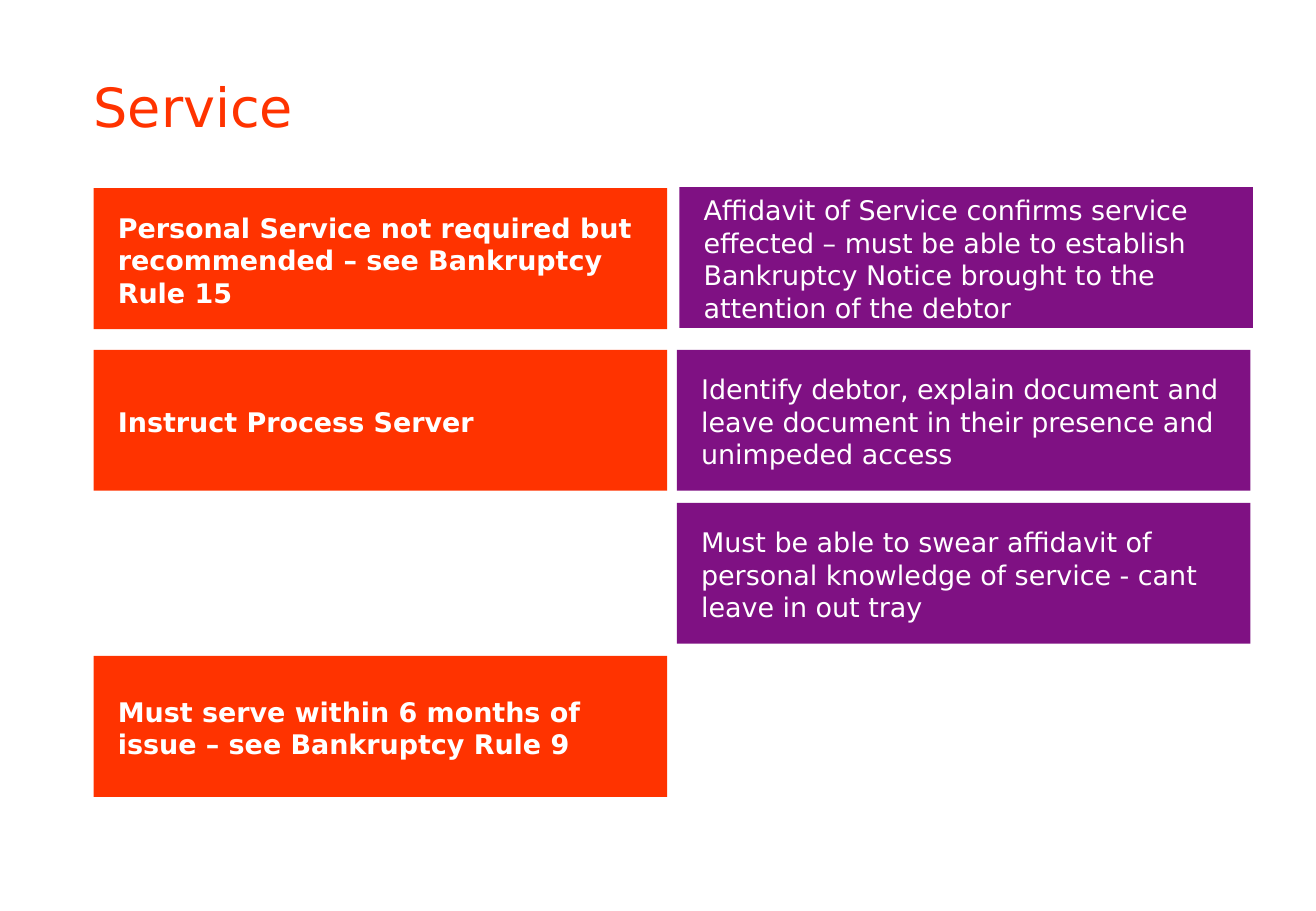
import pptx
import pptx.dml.color
import pptx.enum.shapes
import pptx.enum.text
import pptx.util

Inches = pptx.util.Inches
RGBColor = pptx.dml.color.RGBColor
ORANGE = RGBColor(0xFF, 0x33, 0x00)
PURPLE = RGBColor(0x7F, 0x11, 0x83)
WHITE = RGBColor(0xFF, 0xFF, 0xFF)
FONT = "DejaVu Sans"

CARD_WIDTH, CARD_HEIGHT = 4.72, 1.16
LEFT_COLUMN, RIGHT_COLUMN = 0.77, 5.57
FIRST_ROW = 1.55
LOWER_ROWS = [2.88 + 1.26 * row for row in range(3)]

RULES = [
    (FIRST_ROW, "Personal Service not required but recommended – see Bankruptcy Rule 15"),
    (LOWER_ROWS[0], "Instruct Process Server"),
    (LOWER_ROWS[2], "Must serve within 6 months of issue – see Bankruptcy Rule 9"),
]
DETAILS = [
    (RIGHT_COLUMN + 0.02, FIRST_ROW - 0.01,
     "Affidavit of Service confirms service effected – must be able to establish "
     "Bankruptcy Notice brought to the attention of the debtor"),
    (RIGHT_COLUMN, LOWER_ROWS[0],
     "Identify debtor, explain document and leave document in their presence and "
     "unimpeded access"),
    (RIGHT_COLUMN, LOWER_ROWS[1],
     "Must be able to swear affidavit of personal knowledge of service - cant "
     "leave in out tray"),
]


def write_text(shape, text, size, color, bold, margins):
    """Fill the shape with one left-aligned, vertically centred paragraph."""
    frame = shape.text_frame
    frame.word_wrap = True
    frame.auto_size = pptx.enum.text.MSO_AUTO_SIZE.NONE
    frame.vertical_anchor = pptx.enum.text.MSO_ANCHOR.MIDDLE
    (frame.margin_left, frame.margin_top,
     frame.margin_right, frame.margin_bottom) = map(Inches, margins)
    frame.text = text
    paragraph = frame.paragraphs[0]
    paragraph.alignment = pptx.enum.text.PP_ALIGN.LEFT
    paragraph.font.name = FONT
    paragraph.font.size = pptx.util.Pt(size)
    paragraph.font.bold = bold
    paragraph.font.color.rgb = color


def place_title(slide, left, top, width, height, text):
    title = slide.shapes.title
    title.left, title.top = Inches(left), Inches(top)
    title.width, title.height = Inches(width), Inches(height)
    write_text(title, text, 32, ORANGE, False, (0, 0, 0, 0))


def add_card(slide, left, top, text, fill, bold):
    card = slide.shapes.add_shape(
        pptx.enum.shapes.MSO_SHAPE.ROUNDED_RECTANGLE,
        Inches(left), Inches(top), Inches(CARD_WIDTH), Inches(CARD_HEIGHT))
    card.adjustments[0] = 0
    card.shadow.inherit = False
    card.fill.solid()
    card.fill.fore_color.rgb = fill
    card.line.fill.background()
    write_text(card, text, 16, WHITE, bold, (0.2, 0.06, 0.2, 0.04))


def main():
    presentation = pptx.Presentation()
    presentation.slide_width = Inches(10.83)
    presentation.slide_height = Inches(7.5)
    slide = presentation.slides.add_slide(presentation.slide_layouts[5])
    place_title(slide, LEFT_COLUMN, 0.36, 9.53, 1.02, "Service")
    for top, text in RULES:
        add_card(slide, LEFT_COLUMN, top, text, ORANGE, True)
    for left, top, text in DETAILS:
        add_card(slide, left, top, text, PURPLE, False)
    presentation.save("out.pptx")


if __name__ == "__main__":
    main()
